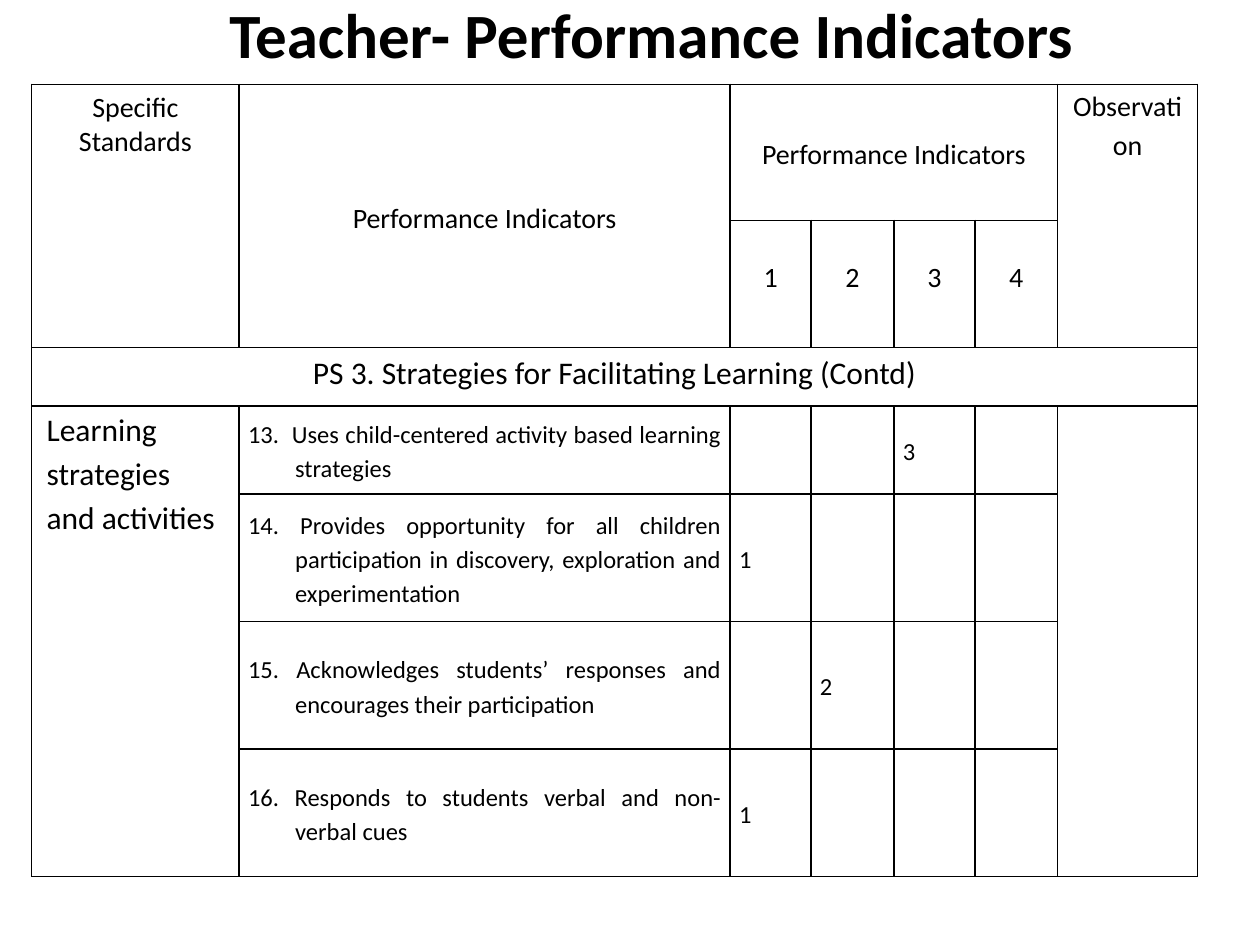
from dataclasses import dataclass

from lxml.etree import SubElement
from pptx import Presentation
from pptx.dml.color import RGBColor
from pptx.enum.text import MSO_ANCHOR as Anchor, MSO_AUTO_SIZE as AutoSize, PP_ALIGN as Align
from pptx.oxml import parse_xml
from pptx.oxml.ns import nsdecls, qn
from pptx.util import Cm, Pt


@dataclass(frozen=True)
class Theme:
    font: str = "Calibri"
    ink: str = "000000"
    paper: str = "FFFFFF"
    title: int = 36
    section: int = 18
    heading: int = 16
    body: int = 14
    border: float = 1
    spacing: float = 1.15
    narrow: float = 0.18
    wide: float = 0.3
    hanging: float = 0.95


class PageBuilder:
    def __init__(self, page, theme):
        self.page = page
        self.theme = theme
        page.background.fill.solid()
        page.background.fill.fore_color.rgb = RGBColor.from_string(theme.paper)

    def add_text(self, frame, text, size, align=Align.LEFT, bold=False, spacing=None, hanging=0):
        para = frame.paragraphs[0]
        para.alignment = align
        if spacing:
            para.line_spacing = spacing
        if hanging:
            properties = para._p.get_or_add_pPr()
            properties.set("marL", str(Cm(hanging)))
            properties.set("indent", str(-Cm(hanging)))
        span = para.add_run()
        span.text = text
        span.font.name = self.theme.font
        span.font.size = Pt(size)
        span.font.bold = bold
        span.font.color.rgb = RGBColor.from_string(self.theme.ink)

    def title(self, text, left, top, width, height):
        box = self.page.shapes.title
        box.left, box.top, box.width, box.height = map(Cm, (left, top, width, height))
        frame = box.text_frame
        frame.word_wrap = True
        frame.auto_size = AutoSize.NONE
        frame.vertical_anchor = Anchor.MIDDLE
        self.add_text(frame, text, self.theme.title, Align.CENTER, bold=True)

    def table(self, left, top, widths, heights):
        box = self.page.shapes.add_table(
            len(heights), len(widths), Cm(left), Cm(top), Cm(sum(widths)), Cm(sum(heights)))
        table = box.table
        table.first_row = table.horz_banding = False
        for column, width in zip(table.columns, widths):
            column.width = Cm(width)
        for row, height in zip(table.rows, heights):
            row.height = Cm(height)
        for cell in table.iter_cells():
            cell.fill.background()
            self.outline(cell)
        return table

    def outline(self, cell):
        properties = cell._tc.get_or_add_tcPr()
        for index, side in enumerate(("lnL", "lnR", "lnT", "lnB")):
            line = parse_xml(f"<a:{side} {nsdecls('a')}/>")
            line.set("w", str(Pt(self.theme.border)))
            fill = SubElement(line, qn("a:solidFill"))
            SubElement(fill, qn("a:srgbClr")).set("val", self.theme.ink)
            properties.insert(index, line)

    def cell(self, cell, text, size, anchor=Anchor.TOP, side=None, bottom=None, **style):
        cell.vertical_anchor = anchor
        if side is not None:
            cell.margin_left = cell.margin_right = Cm(side)
            cell.margin_top = cell.margin_bottom = 0
        if bottom is not None:
            cell.margin_bottom = Cm(bottom)
        self.add_text(cell.text_frame, text, size, **style)


def main():
    theme = Theme()
    deck = Presentation()
    deck.slide_width, deck.slide_height = Cm(25.4), Cm(19.05)
    builder = PageBuilder(deck.slides.add_slide(deck.slide_layouts[5]), theme)
    builder.title("Teacher- Performance Indicators", 1.7, 0, 22.86, 1.35)

    widths = [4.18, 9.9, 1.63, 1.67, 1.63, 1.67, 2.82]
    heights = [2.74, 2.57, 1.17, 1.78] + [2.57] * 3
    table = builder.table(0.64, 1.7, widths, heights)
    merges = [(0, 0, 1, 0), (0, 1, 1, 1), (0, 2, 0, 5), (0, 6, 1, 6),
              (2, 0, 2, 6), (3, 0, 6, 0), (3, 6, 6, 6)]
    for top, left, bottom, right in merges:
        table.cell(top, left).merge(table.cell(bottom, right))

    middle = dict(anchor=Anchor.MIDDLE, side=theme.narrow, spacing=theme.spacing)
    roomy = dict(side=theme.wide, spacing=theme.spacing)
    headings = [
        (0, "Specific Standards", {}),
        (1, "Performance Indicators", middle),
        (2, "Performance Indicators", middle),
        (6, "Observation", roomy),
    ]
    for column, text, style in headings:
        builder.cell(table.cell(0, column), text, theme.heading, align=Align.CENTER, **style)
    for score in range(1, 5):
        builder.cell(table.cell(1, score + 1), str(score), theme.heading,
                     anchor=Anchor.MIDDLE, bottom=0.38, align=Align.CENTER)
    builder.cell(table.cell(2, 0), "PS 3. Strategies for Facilitating Learning (Contd)",
                 theme.section, align=Align.CENTER)
    builder.cell(table.cell(3, 0), "Learning strategies and activities",
                 theme.section, align=Align.JUSTIFY, **roomy)

    indicators = [
        ("13.  Uses child-centered activity based learning strategies", 3),
        ("14. Provides opportunity for all children participation in discovery, "
         "exploration and experimentation", 1),
        ("15. Acknowledges students’ responses and encourages their participation", 2),
        ("16. Responds to students verbal and non-verbal cues", 1),
    ]
    for row, (text, score) in enumerate(indicators, start=3):
        builder.cell(table.cell(row, 1), text, theme.body,
                     align=Align.JUSTIFY, hanging=theme.hanging, **middle)
        builder.cell(table.cell(row, score + 1), str(score), theme.body, **middle)

    deck.save("out.pptx")


if __name__ == "__main__":
    main()
